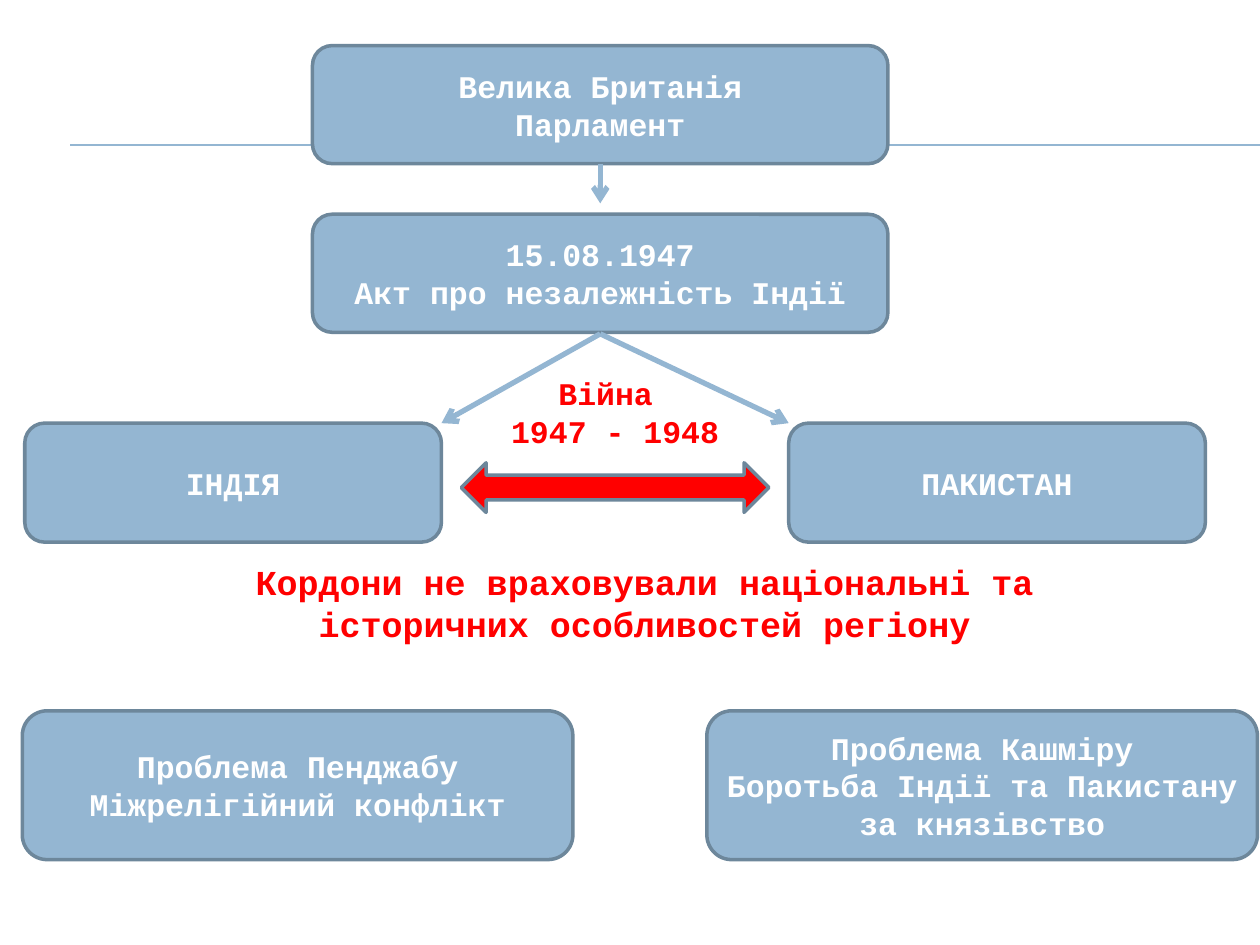
from lxml.etree import SubElement
from pptx import Presentation
from pptx.dml.color import RGBColor as Rgb
from pptx.enum.shapes import MSO_CONNECTOR as Link, MSO_SHAPE as Kind
from pptx.enum.text import MSO_ANCHOR as Anchor, PP_ALIGN as Align
from pptx.oxml.ns import qn
from pptx.util import Cm, Pt

HUES = {"blue": "94B6D2", "edge": "6D879B", "red": "FF0000", "white": "FFFFFF"}
FONT = "Courier New"


def hue(name):
    """Return a named colour."""
    return Rgb.from_string(HUES[name])


def write(frame, text, size=18, color="white", anchor=Anchor.MIDDLE):
    """Write centred bold lines into a text frame."""
    frame.word_wrap = True
    frame.vertical_anchor = anchor
    frame.margin_left = frame.margin_right = Cm(0.23)
    for i, line in enumerate(text.split("\n")):
        para = frame.paragraphs[0] if i == 0 else frame.add_paragraph()
        para.alignment = Align.CENTER
        run = para.add_run()
        run.text = line
        font = run.font
        font.name, font.size, font.bold = FONT, Pt(size), True
        font.color.rgb = hue(color)


def block(slide, box, text="", kind=Kind.ROUNDED_RECTANGLE, fill="blue"):
    """Draw an outlined shape with an optional caption."""
    shape = slide.shapes.add_shape(kind, *map(Cm, box))
    shape.shadow.inherit = False
    shape.fill.solid()
    shape.fill.fore_color.rgb = hue(fill)
    shape.line.color.rgb = hue("edge")
    shape.line.width = Pt(2)
    if text:
        write(shape.text_frame, text)


def note(slide, box, text, size):
    """Place a red remark."""
    frame = slide.shapes.add_textbox(*map(Cm, box)).text_frame
    write(frame, text, size=size, color="red", anchor=Anchor.TOP)


def link(slide, start, end, width=3, head=True):
    """Draw a straight line, with an arrowhead if wanted."""
    line = slide.shapes.add_connector(Link.STRAIGHT, *map(Cm, start + end))
    line.line.color.rgb = hue("blue")
    line.line.width = Pt(width)
    if head:
        SubElement(line.line._get_or_add_ln(), qn("a:tailEnd"), type="arrow")
    SubElement(line._element.spPr, qn("a:effectLst"))


def rules(slide, left, top, right):
    """Draw the thin double rule behind the blocks."""
    for y in (top, top + 0.02):
        link(slide, (left, y), (right, y), width=0.75, head=False)


def origin(slide, left, top, width, height):
    """Stack parliament and the act, joined by an arrow."""
    tall, mid = 2.38, left + width / 2
    texts = "Велика Британія\nПарламент", "15.08.1947\nАкт про незалежність Індії"
    for y, text in zip((top, top + height - tall), texts):
        block(slide, (left, y, width, tall), text)
    link(slide, (mid, top + tall), (mid, top + tall + 0.8))


def states(slide, left, top, width, height):
    """Set the two states at the sides with the war between them."""
    wide, gap, rise = 8.4, 0.5, 1.8
    inner, far = left + wide, left + width - wide
    for x, text in ((left, "ІНДІЯ"), (far, "ПАКИСТАН")):
        block(slide, (x, top, wide, height), text)
    block(slide, (inner + gap - 0.1, top + 0.8, far - inner - 2 * gap + 0.2, 1),
          kind=Kind.LEFT_RIGHT_ARROW, fill="red")
    note(slide, (inner + 0.8, top - 1.11, 5.4, 1.8), "Війна \n1947 - 1948", 18)
    for x in (inner, far):
        link(slide, (12.1, top - rise), (x, top))


def issues(slide, left, top, width, height):
    """Set the two resulting problems side by side."""
    wide = 11.1
    texts = ("Проблема Пенджабу\nМіжрелігійний конфлікт",
             "Проблема Кашміру\nБоротьба Індії та Пакистану за князівство")
    for x, text in zip((left, left + width - wide), texts):
        block(slide, (x, top, wide, height), text)


def main():
    """Build and save the slide."""
    deck = Presentation()
    deck.slide_width, deck.slide_height = Cm(25.4), Cm(19.05)
    slide = deck.slides.add_slide(deck.slide_layouts[6])
    rules(slide, 1.42, 2.92, 25.4)
    origin(slide, 6.3, 0.92, 11.6, 5.78)
    states(slide, 0.5, 8.53, 23.8, 2.4)
    note(slide, (4.3, 11.18, 17.4, 1.96),
         "Кордони не враховували національні та історичних особливостей регіону", 20)
    issues(slide, 0.45, 14.33, 24.9, 3)
    deck.save("out.pptx")


if __name__ == "__main__":
    main()
